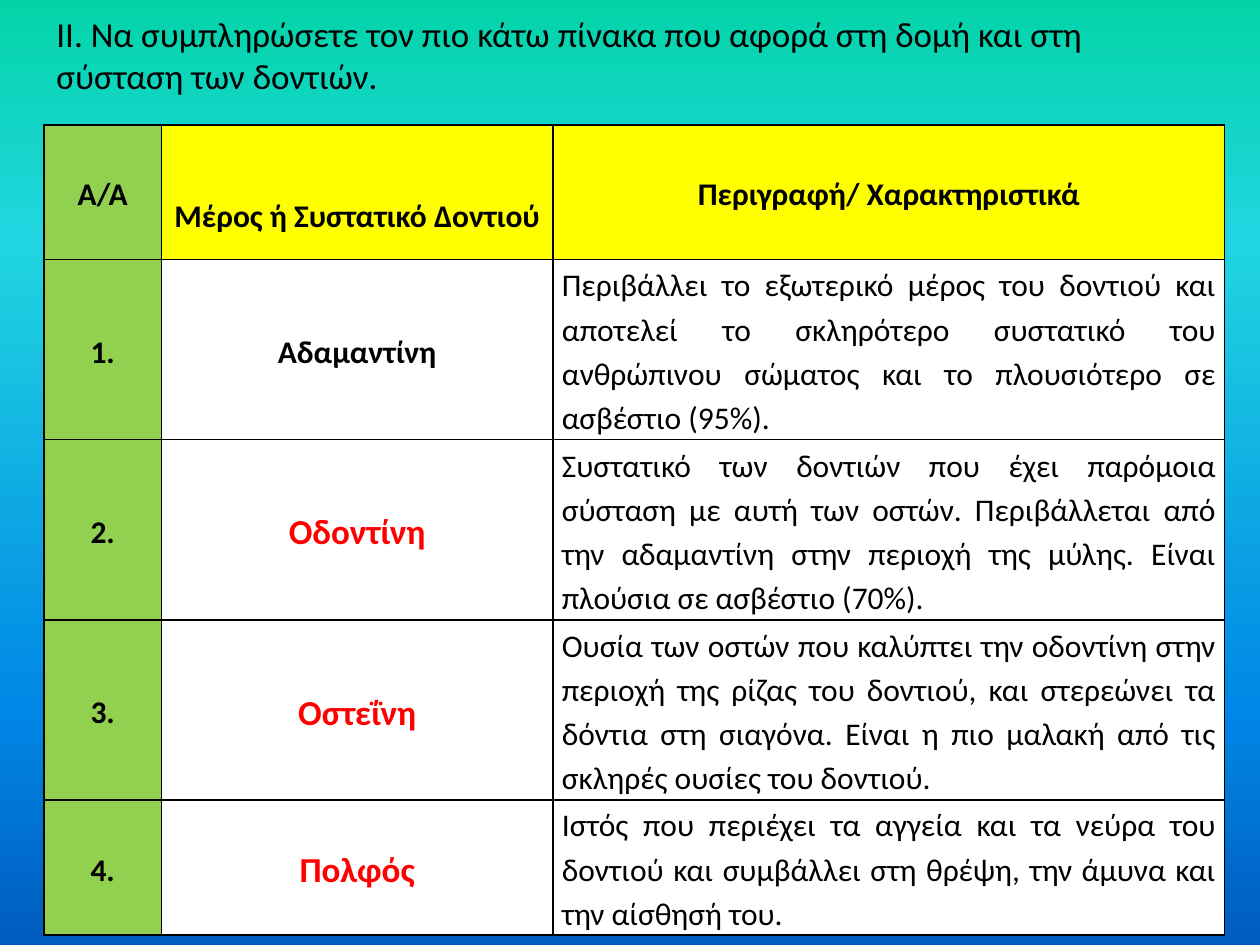
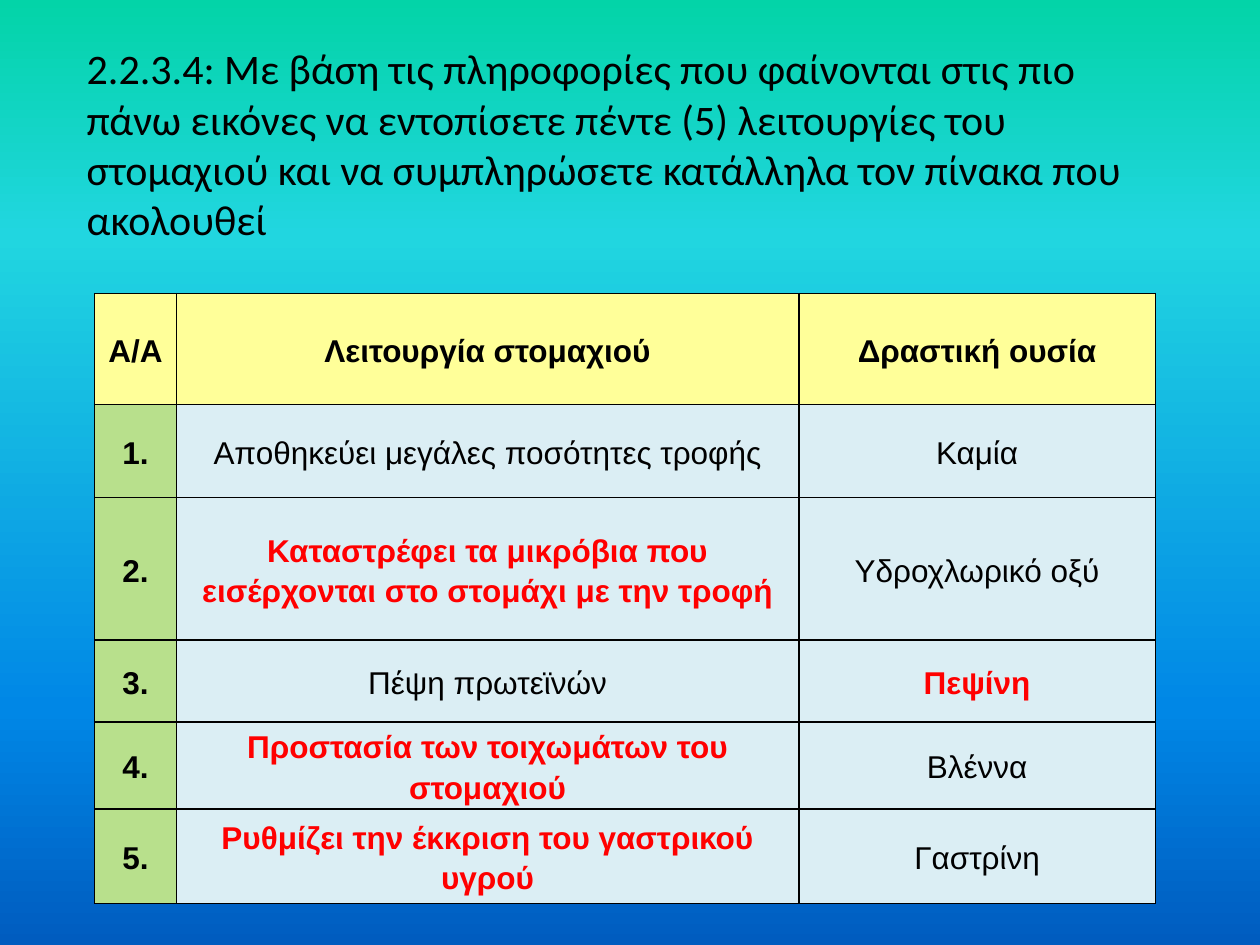
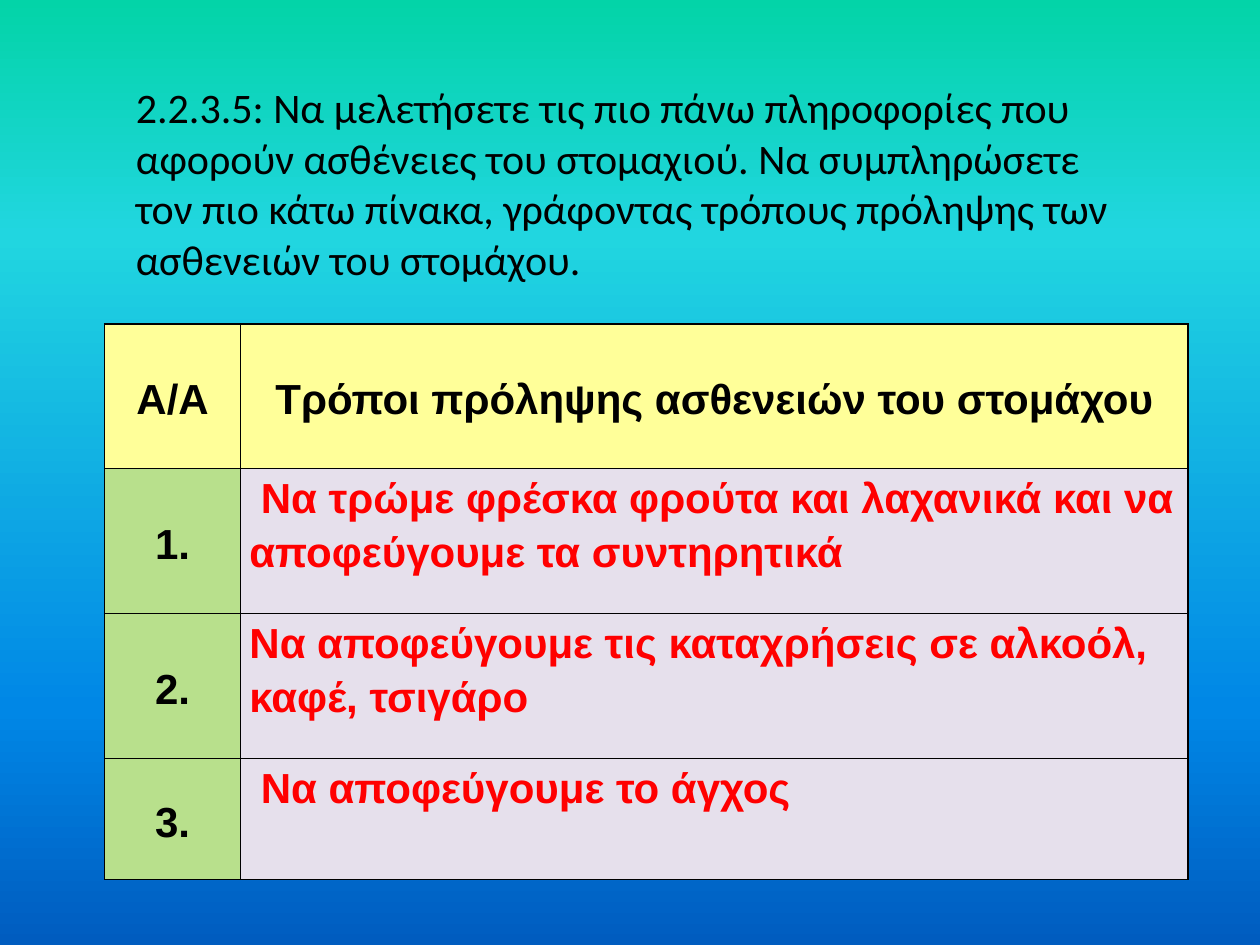
from dataclasses import dataclass

from lxml.etree import SubElement
from pptx import Presentation
from pptx.dml.color import RGBColor as Rgb
from pptx.enum.text import MSO_ANCHOR as Anchor
from pptx.enum.text import MSO_AUTO_SIZE as Auto
from pptx.enum.text import PP_ALIGN as Align
from pptx.oxml.ns import qn
from pptx.util import Inches, Pt

COLORS = {
    "ink": "000000", "answer": "FF0000", "white": "FFFFFF",
    "green": "92D050", "yellow": "FFFF00",
    "lime": "B8E08C", "cream": "FFFF99", "ice": "DBEEF4", "lilac": "E6E0EC",
}
SKY = [(0, "03D4A8"), (25, "21D6E0"), (75, "0087E6"), (100, "005CBF")]


@dataclass
class Item:
    """The text of one table cell with its own look."""
    text: str
    bold: bool = True
    color: str = "ink"
    size: int = 0
    top: float = 0
    indent: float = 0


def answer(text, **look):
    return Item(text, color="answer", **look)


def plain(text):
    return Item(text, bold=False)


class Deck:
    def __init__(self):
        self.prs = Presentation()
        self.prs.slide_width = Inches(10)
        self.prs.slide_height = Inches(7.5)
        self.slide = None
        self.paint()

    def paint(self):
        """Give the master the gradient that every slide shows."""
        master = self.prs.slide_master
        fill = master.background.fill
        fill.gradient()
        fill.gradient_angle = 270
        stops = master.element.xpath("./p:cSld/p:bg//a:gsLst")[0]
        for stop in list(stops):
            stops.remove(stop)
        for place, color in SKY:
            stop = SubElement(stops, qn("a:gs"), pos=str(place * 1000))
            SubElement(stop, qn("a:srgbClr"), val=color)

    def start(self):
        self.slide = self.prs.slides.add_slide(self.prs.slide_layouts[6])

    def words(self, para, text, size, font, bold=False, color="ink"):
        run = para.add_run()
        run.text = text
        run.font.size = Pt(size)
        run.font.name = font
        run.font.bold = bold
        run.font.color.rgb = Rgb.from_string(COLORS[color])

    def task(self, text, left, top, width, height, size=24):
        box = self.slide.shapes.add_textbox(
            Inches(left), Inches(top), Inches(width), Inches(height))
        frame = box.text_frame
        frame.word_wrap = True
        frame.auto_size = Auto.SHAPE_TO_FIT_TEXT
        self.words(frame.paragraphs[0], text, size, "Calibri")

    def border(self, cell):
        props = cell._tc.get_or_add_tcPr()
        for side in ("lnL", "lnR", "lnT", "lnB"):
            line = SubElement(props, qn(f"a:{side}"), w=str(Pt(1)))
            fill = SubElement(line, qn("a:solidFill"))
            SubElement(fill, qn("a:srgbClr"), val=COLORS["ink"])

    def cell(self, cell, item, fill, align, size, font):
        self.border(cell)
        cell.fill.solid()
        cell.fill.fore_color.rgb = Rgb.from_string(COLORS[fill])
        cell.margin_left = cell.margin_right = Inches(0.07)
        cell.margin_top, cell.margin_bottom = Inches(item.top), 0
        cell.vertical_anchor = Anchor.TOP if align == Align.LEFT else Anchor.MIDDLE
        para = cell.text_frame.paragraphs[0]
        para.alignment = align
        para.line_spacing = 1.15
        if item.indent:
            para._p.get_or_add_pPr().set("indent", str(Inches(item.indent)))
        self.words(para, item.text, item.size or size, font, item.bold, item.color)

    def table(self, left, top, cols, rows, head, body, fills, last=Align.CENTER,
              size=18, font="Arial"):
        """Fills are those of the corner, header, number column and body."""
        corner, band, key, base = fills
        frame = self.slide.shapes.add_table(
            len(rows), len(cols), Inches(left), Inches(top),
            Inches(sum(cols)), Inches(sum(rows)))
        table = frame.table
        table.first_row = table.horz_banding = False
        for col, width in zip(table.columns, cols):
            col.width = Inches(width)
        for row, height in zip(table.rows, rows):
            row.height = Inches(height)
        lines = [[Item("Α/Α"), *head]]
        lines += [[Item(f"{n}."), *items] for n, items in enumerate(body, 1)]
        for r, line in enumerate(lines):
            for c, item in enumerate(line):
                if r == 0:
                    fill = band if c else corner
                else:
                    fill = base if c else key
                align = last if r and c == len(cols) - 1 else Align.CENTER
                self.cell(table.cell(r, c), item, fill, align, size, font)


def teeth(deck):
    deck.start()
    deck.table(
        0.35, 0.99, [0.93, 3.11, 5.33], [1.07, 1.43, 1.43, 1.43, 1.07],
        [Item("Μέρος ή Συστατικό Δοντιού", top=0.35),
         Item("Περιγραφή/ Χαρακτηριστικά")],
        [
            [Item("Aδαμαντίνη"),
             plain("Περιβάλλει το εξωτερικό μέρος του δοντιού και αποτελεί το "
                   "σκληρότερο συστατικό του ανθρώπινου σώματος και το "
                   "πλουσιότερο σε ασβέστιο (95%).")],
            [answer("Οδοντίνη", size=20),
             plain("Συστατικό των δοντιών που έχει παρόμοια σύσταση με αυτή των "
                   "οστών. Περιβάλλεται από την αδαμαντίνη στην περιοχή της "
                   "μύλης. Είναι πλούσια σε ασβέστιο (70%).")],
            [answer("Οστεΐνη", size=20),
             plain("Ουσία των οστών που καλύπτει την οδοντίνη στην περιοχή της "
                   "ρίζας του δοντιού, και στερεώνει τα δόντια στη σιαγόνα. "
                   "Είναι η πιο μαλακή από τις σκληρές ουσίες του δοντιού.")],
            [answer("Πολφός", size=20),
             plain("Ιστός που περιέχει τα αγγεία και τα νεύρα του δοντιού και "
                   "συμβάλλει στη θρέψη, την άμυνα και την αίσθησή του.")],
        ],
        ("green", "yellow", "green", "white"), Align.JUSTIFY, font="Calibri")
    deck.task("ΙΙ. Να συμπληρώσετε τον πιο κάτω πίνακα που αφορά στη δομή και στη "
              "σύσταση των δοντιών.", 0.35, 0.05, 9.37, 0.77, 20)


def stomach(deck):
    deck.start()
    deck.task("2.2.3.4: Με βάση τις πληροφορίες που φαίνονται στις πιο πάνω "
              "εικόνες να εντοπίσετε πέντε (5) λειτουργίες του στομαχιού και να "
              "συμπληρώσετε κατάλληλα τον πίνακα που ακολουθεί",
              0.59, 0.29, 8.5, 1.72)
    deck.table(
        0.75, 2.33, [0.65, 4.94, 2.83], [0.88, 0.74, 1.13, 0.65, 0.65, 0.75],
        [Item("Λειτουργία στομαχιού"), Item("Δραστική ουσία")],
        [
            [plain("Αποθηκεύει μεγάλες ποσότητες τροφής"), plain("Καμία")],
            [answer("Καταστρέφει τα μικρόβια που εισέρχονται στο στομάχι με την "
                    "τροφή"), plain("Υδροχλωρικό οξύ")],
            [plain("Πέψη πρωτεϊνών"), answer("Πεψίνη")],
            [answer("Προστασία των τοιχωμάτων του στομαχιού"), plain("Βλέννα")],
            [answer("Ρυθμίζει την έκκριση του γαστρικού υγρού"),
             plain("Γαστρίνη")],
        ],
        ("cream", "cream", "lime", "ice"))


def care(deck):
    deck.start()
    deck.task("2.2.3.5: Να μελετήσετε τις πιο πάνω πληροφορίες που αφορούν "
              "ασθένειες του στομαχιού. Να συμπληρώσετε τον πιο κάτω πίνακα, "
              "γράφοντας τρόπους πρόληψης των ασθενειών του στομάχου.",
              0.98, 0.6, 8.03, 1.72)
    deck.table(
        0.83, 2.57, [1.08, 7.52], [1.15, 1.15, 1.15, 0.96],
        [Item("Τρόποι πρόληψης ασθενειών του στομάχου")],
        [
            [answer("Να τρώμε φρέσκα φρούτα και λαχανικά και να αποφεύγουμε τα "
                    "συντηρητικά", indent=0.09)],
            [answer("Να αποφεύγουμε τις καταχρήσεις σε αλκοόλ, καφέ, τσιγάρο")],
            [answer("Να αποφεύγουμε το άγχος", indent=0.09)],
        ],
        ("cream", "cream", "lime", "lilac"), Align.LEFT, size=24)


def main():
    deck = Deck()
    # Slides in order
    for build in (teeth, stomach, care):
        build(deck)
    deck.prs.save("out.pptx")


if __name__ == "__main__":
    main()
